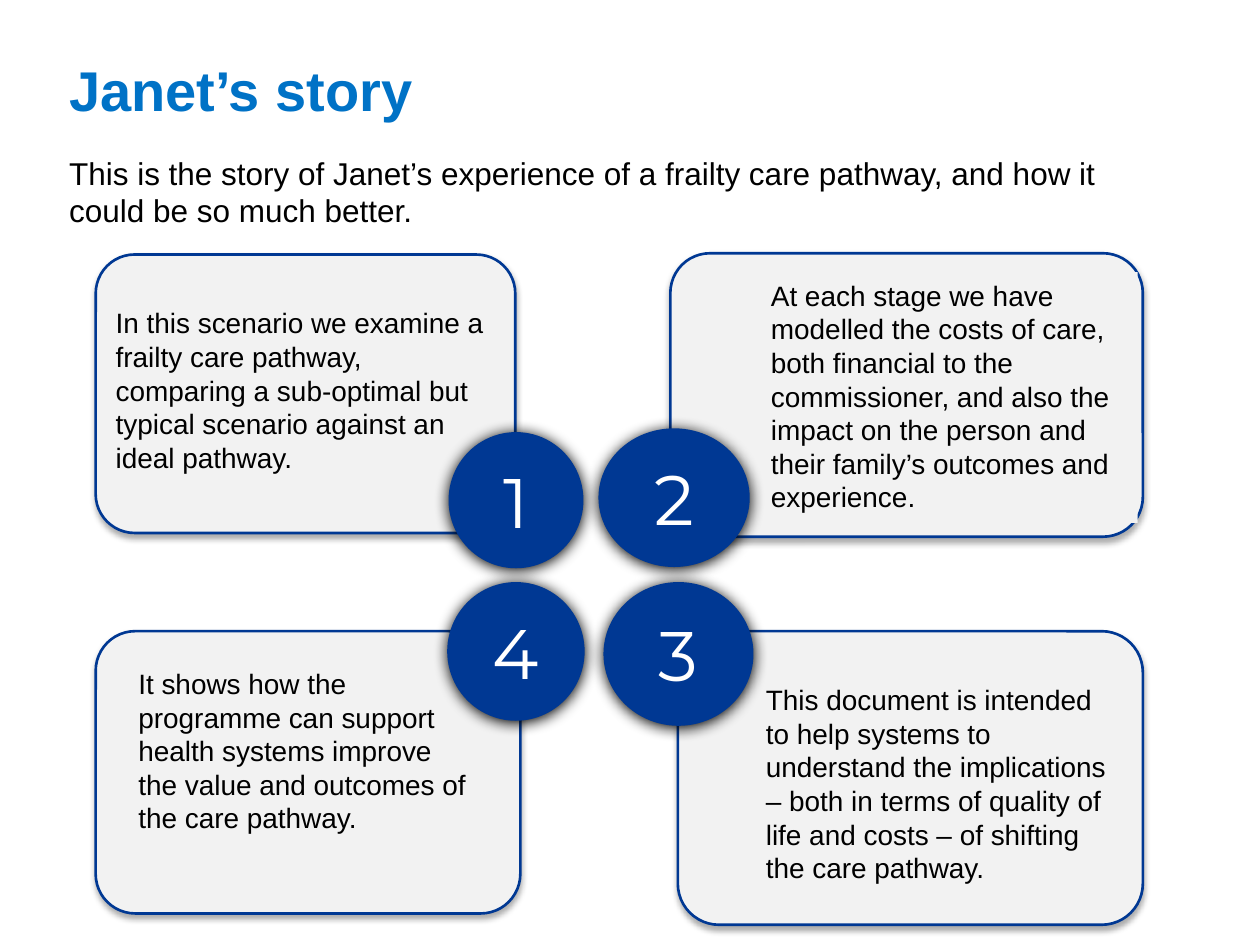
from lxml import etree
from pptx import Presentation
from pptx.dml.color import RGBColor
from pptx.enum.shapes import MSO_SHAPE
from pptx.enum.text import MSO_ANCHOR, PP_ALIGN
from pptx.oxml.ns import qn
from pptx.util import Inches, Pt

ROUNDED, OVAL = MSO_SHAPE.ROUNDED_RECTANGLE, MSO_SHAPE.OVAL
TOP, MIDDLE = MSO_ANCHOR.TOP, MSO_ANCHOR.MIDDLE
LEFT, CENTER = PP_ALIGN.LEFT, PP_ALIGN.CENTER
BLACK = RGBColor(0x00, 0x00, 0x00)
WHITE = RGBColor(0xFF, 0xFF, 0xFF)
SKY = RGBColor(0x00, 0x72, 0xC6)
NAVY = RGBColor(0x00, 0x38, 0x93)
PALE = RGBColor(0xF2, 0xF2, 0xF2)


def write(shape, text, size=16, color=BLACK, font="Arial", bold=False,
          align=LEFT, anchor=TOP):
    frame = shape.text_frame
    frame.word_wrap = True
    frame.vertical_anchor = anchor
    paragraph = frame.paragraphs[0]
    paragraph.alignment = align
    run = paragraph.add_run()
    run.text = text
    run.font.size = Pt(size)
    run.font.name = font
    run.font.bold = bold
    run.font.color.rgb = color


def add_raised(kind, box, fill, blur, distance, opacity):
    shape = slide.shapes.add_shape(kind, *map(Inches, box))
    shape.fill.solid()
    shape.fill.fore_color.rgb = fill
    shape.line.color.rgb = NAVY
    shape.line.width = Pt(1.5)
    shape.shadow.inherit = False
    effects = shape._element.spPr.find(qn("a:effectLst"))
    shadow = etree.SubElement(effects, qn("a:outerShdw"), blurRad=str(Pt(blur)),
                              dist=str(Pt(distance)), dir="5400000", rotWithShape="0")
    tint = etree.SubElement(shadow, qn("a:srgbClr"), val="000000")
    etree.SubElement(tint, qn("a:alpha"), val=str(opacity * 1000))
    return shape


prs = Presentation()
prs.slide_width, prs.slide_height = Inches(10), Inches(7.5)
slide = prs.slides.add_slide(prs.slide_layouts[6])

title = slide.shapes.add_textbox(Inches(0.45), Inches(0.34), Inches(8.05), Inches(0.73))
write(title, "Janet’s story", size=32, color=SKY, bold=True, anchor=MIDDLE)

intro = slide.shapes.add_textbox(Inches(0.45), Inches(1.17), Inches(8.79), Inches(1.11))
write(intro, "This is the story of Janet’s experience of a frailty care pathway, "
             "and how it could be so much better.", size=18)

stages = [
    ("1", (0.76, 2.02, 3.33, 2.21), (0.82, 2.38, 3.16, 1.54), (3.57, 3.44, 1.05, 1.06),
     "In this scenario we examine a frailty care pathway, comparing a sub-optimal "
     "but typical scenario against an ideal pathway."),
    ("4", (0.76, 5.01, 3.37, 2.24), (1, 5.24, 2.83, 1.45), (3.56, 4.63, 1.07, 1.08),
     "It shows how the programme can support health systems improve the value and "
     "outcomes of the care pathway."),
    ("3", (5.38, 5.01, 3.69, 2.33), (5.98, 5.37, 3.01, 1.72), (4.8, 4.63, 1.17, 1.12),
     "This document is intended to help systems to understand the implications – "
     "both in terms of quality of life and costs – of shifting the care pathway."),
    ("2", (5.32, 2.01, 3.75, 2.25), (6.02, 2.16, 3.01, 1.99), (4.76, 3.41, 1.18, 1.08),
     "At each stage we have modelled the costs of care, both financial to the "
     "commissioner, and also the impact on the person and their family’s outcomes "
     "and experience."),
]

for number, panel_box, caption_box, badge_box, text in stages:
    panel = add_raised(ROUNDED, panel_box, PALE, blur=3.5, distance=2.2, opacity=32)
    panel.adjustments[0] = 0.14

    caption = slide.shapes.add_textbox(*map(Inches, caption_box))
    caption.fill.solid()
    caption.fill.fore_color.rgb = PALE
    write(caption, text)

    badge = add_raised(OVAL, badge_box, NAVY, blur=8.5, distance=1, opacity=100)
    write(badge, number, size=40, color=WHITE, font="Montserrat",
          align=CENTER, anchor=MIDDLE)

prs.save("out.pptx")
